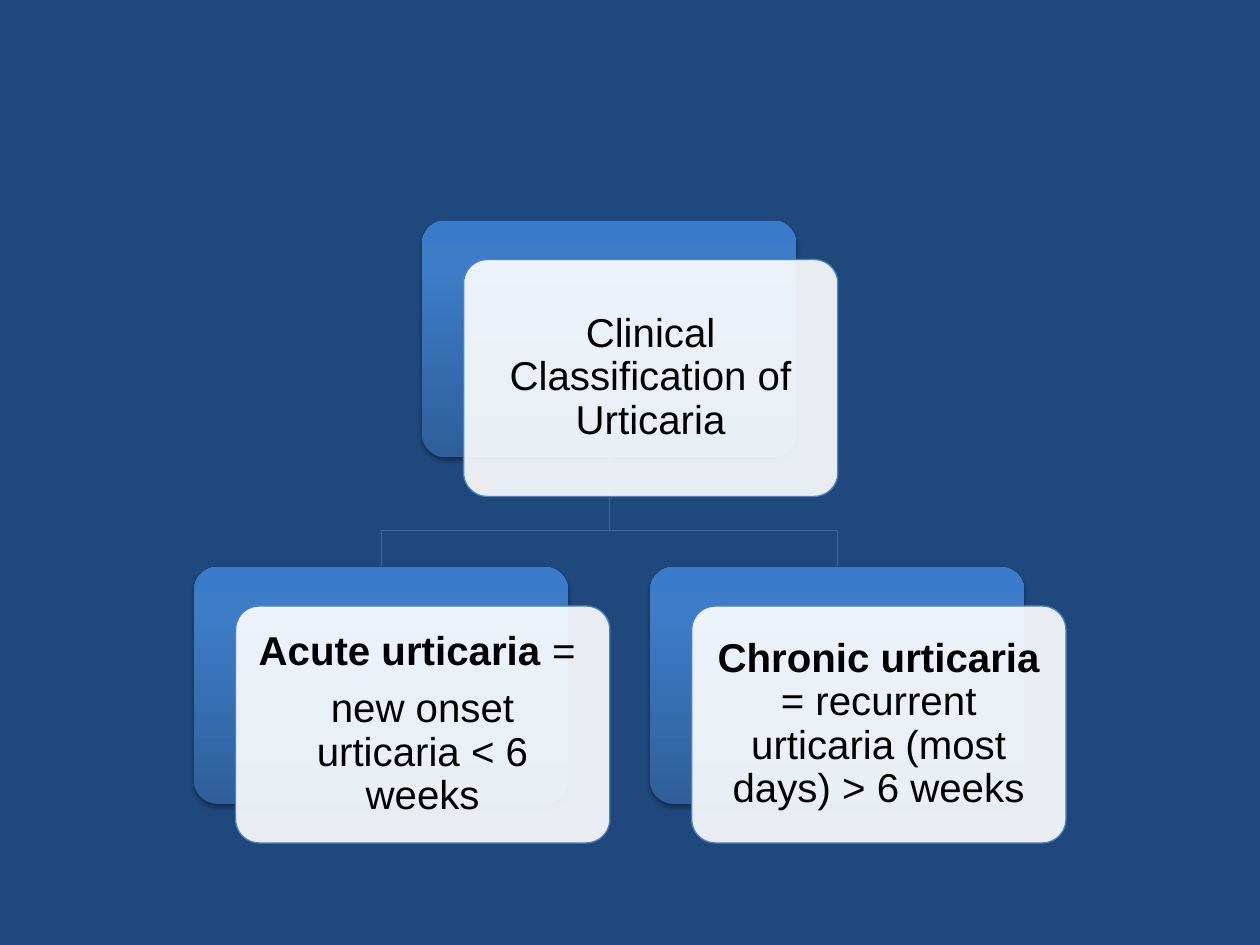
from copy import deepcopy
from dataclasses import dataclass

from lxml.etree import SubElement
from pptx import Presentation
from pptx.dml.color import RGBColor
from pptx.enum.shapes import MSO_SHAPE as Preset
from pptx.enum.text import MSO_ANCHOR as Anchor, PP_ALIGN as Align
from pptx.oxml.ns import qn
from pptx.util import Inches, Pt

COLORS = {
    "background": "1F497D", "branch": "3F6797", "card": "FFFFFF",
    "card_edge": "4F81BD", "text": "000000", "shadow": "000000",
}
PANEL_GRADIENT = [(0, "2F5F99"), (0.8, "3D7CC7"), (1, "3A7CCB")]

# Grid of the tree, in inches
LEFT, TOP = 1.54, 1.75
COLUMN_STEP, ROW_STEP = 3.62, 2.75
BOX_W, BOX_H = 2.97, 1.88
CARD_DX, CARD_DY = 0.33, 0.31
BEND_SHARE = 0.67

TEXT_FORMAT = {"size": Pt(23), "name": "Arial"}
FRAME_FORMAT = {
    "word_wrap": True, "vertical_anchor": Anchor.MIDDLE,
    "margin_left": Inches(0.1), "margin_right": Inches(0.1),
    "margin_top": Inches(0.1), "margin_bottom": Inches(0.1),
}


@dataclass(frozen=True)
class Phrase:
    text: str
    bold: bool = False


@dataclass(frozen=True)
class Node:
    column: float
    row: int
    paragraphs: list[list[Phrase]]

    @property
    def left(self) -> float:
        return LEFT + self.column * COLUMN_STEP

    @property
    def top(self) -> float:
        return TOP + self.row * ROW_STEP

    @property
    def center(self) -> float:
        return self.left + BOX_W / 2


ROOT = Node(0.5, 0, [[Phrase("Clinical Classification of Urticaria")]])
TYPES = [
    Node(0, 1, [[Phrase("Acute urticaria", True), Phrase(" = ")],
                [Phrase("new onset urticaria < 6 weeks")]]),
    Node(1, 1, [[Phrase("Chronic urticaria", True),
                 Phrase(" = recurrent urticaria (most days) > 6 weeks")]]),
]


def rgb(name: str) -> RGBColor:
    return RGBColor.from_string(COLORS[name])


def apply(target, values: dict) -> None:
    for key, value in values.items():
        setattr(target, key, value)


def draw_line(line, color: str) -> None:
    line.color.rgb = rgb(color)
    line.width = Pt(0.75)


def add_branch(shapes, parent: Node, child: Node) -> None:
    start = parent.top + BOX_H
    bend = start + (child.top - start) * BEND_SHARE
    builder = shapes.build_freeform(Inches(parent.center), Inches(start))
    turns = [(parent.center, bend), (child.center, bend), (child.center, child.top)]
    builder.add_line_segments([(Inches(x), Inches(y)) for x, y in turns], close=False)
    branch = builder.convert_to_shape()
    branch.shadow.inherit = False
    branch.fill.background()
    draw_line(branch.line, "branch")


def add_rounded_box(shapes, left: float, top: float):
    box = shapes.add_shape(Preset.ROUNDED_RECTANGLE, Inches(left), Inches(top),
                           Inches(BOX_W), Inches(BOX_H))
    box.adjustments[0] = 0.1
    box.shadow.inherit = False
    return box


def fill_gradient(fill) -> None:
    fill.gradient()
    fill.gradient_angle = 90
    stop_list = fill._xPr.find(f".//{qn('a:gsLst')}")
    stop_list.append(deepcopy(stop_list[-1]))
    for stop, (position, color) in zip(fill.gradient_stops, PANEL_GRADIENT):
        stop.position = position
        stop.color.rgb = RGBColor.from_string(color)


def add_shadow(shape) -> None:
    effects = shape._element.spPr.find(qn("a:effectLst"))
    shadow = SubElement(effects, qn("a:outerShdw"), blurRad=str(Pt(3.1)),
                        dist=str(Pt(1.8)), dir="5400000", rotWithShape="0")
    color = SubElement(shadow, qn("a:srgbClr"), val=COLORS["shadow"])
    SubElement(color, qn("a:alpha"), val="35000")


def write_text(frame, paragraphs: list[list[Phrase]]) -> None:
    apply(frame, FRAME_FORMAT)
    for index, phrases in enumerate(paragraphs):
        paragraph = frame.add_paragraph() if index else frame.paragraphs[0]
        apply(paragraph, {"alignment": Align.CENTER, "line_spacing": 0.9,
                          "space_before": Pt(8 if index else 0)})
        for phrase in phrases:
            run = paragraph.add_run()
            run.text = phrase.text
            apply(run.font, TEXT_FORMAT | {"bold": phrase.bold})
            run.font.color.rgb = rgb("text")


def add_node(shapes, node: Node) -> None:
    panel = add_rounded_box(shapes, node.left, node.top)
    fill_gradient(panel.fill)
    panel.line.fill.background()
    add_shadow(panel)

    card = add_rounded_box(shapes, node.left + CARD_DX, node.top + CARD_DY)
    card.fill.solid()
    card.fill.fore_color.rgb = rgb("card")
    card_color = card._element.spPr.find(f"{qn('a:solidFill')}/{qn('a:srgbClr')}")
    SubElement(card_color, qn("a:alpha"), val="90000")
    draw_line(card.line, "card_edge")
    write_text(card.text_frame, node.paragraphs)


def main() -> None:
    deck = Presentation()
    apply(deck, {"slide_width": Inches(10), "slide_height": Inches(7.5)})
    slide = deck.slides.add_slide(deck.slide_layouts[6])
    slide.background.fill.solid()
    slide.background.fill.fore_color.rgb = rgb("background")
    for kind in reversed(TYPES):
        add_branch(slide.shapes, ROOT, kind)
    for node in [ROOT, *TYPES]:
        add_node(slide.shapes, node)
    deck.save("out.pptx")


if __name__ == "__main__":
    main()
